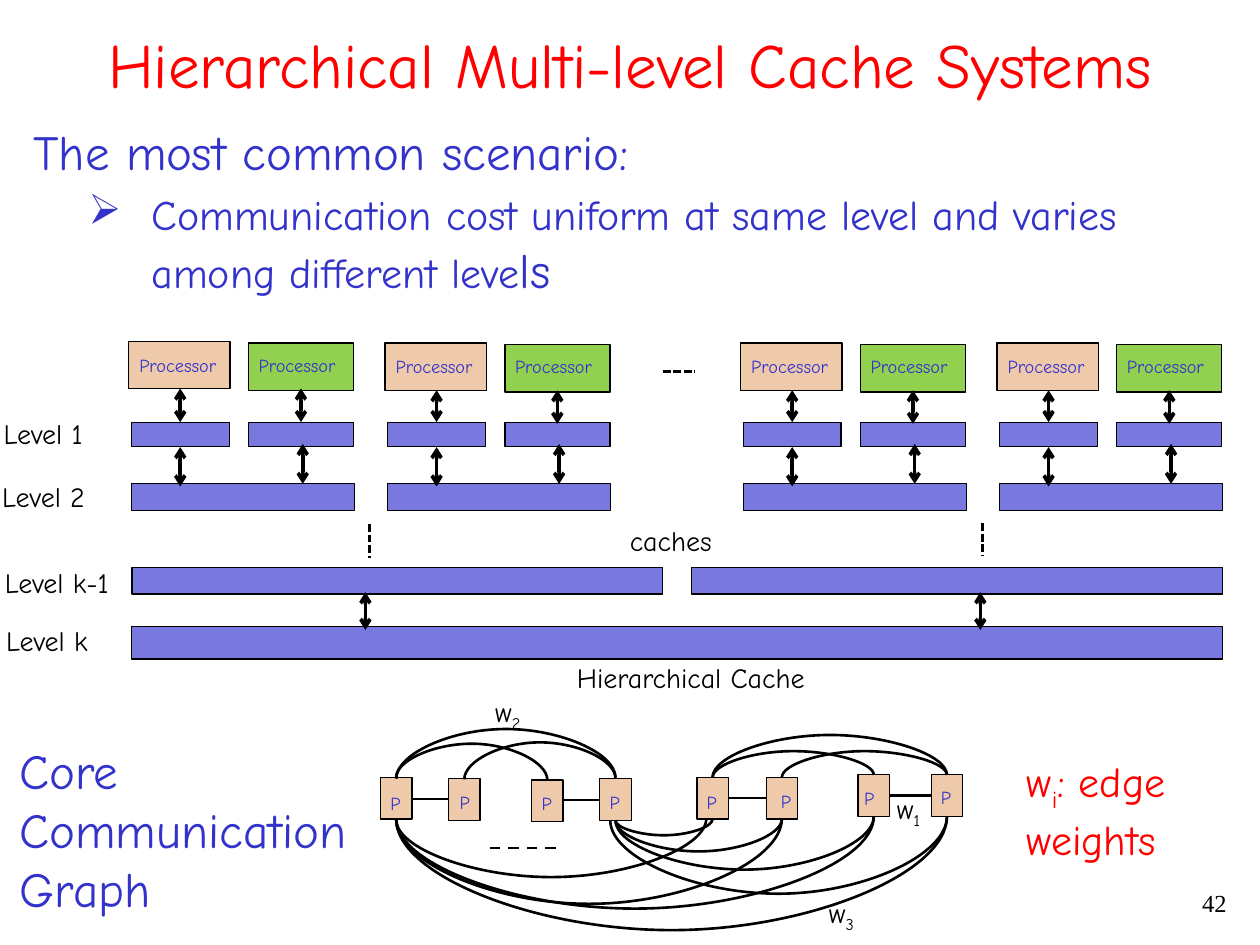
import pptx
import pptx.dml.color
import pptx.enum.dml
import pptx.enum.shapes
import pptx.enum.text
import pptx.oxml
import pptx.oxml.ns
import pptx.util
from lxml import etree

Pt = pptx.util.Pt
CONNECTOR = pptx.enum.shapes.MSO_CONNECTOR
ALIGN = pptx.enum.text.PP_ALIGN
DASH = pptx.enum.dml.MSO_LINE
qn = pptx.oxml.ns.qn

FONT = "Comic Neue"
BLACK, RED, BLUE = "000000", "FF0000", "3333CC"
PEACH, GREEN, CACHE = "EEC9AA", "92D050", "7878DE"

# Horizontal offset and drop of each group of two processors
GROUPS = [(0, 0), (146.5, 1), (349.7, 1), (496.2, 1)]
# Left and top of each graph node, then left and top of its letter
NODES = [
    (217.4, 444.3, 216, 449.3), (256.3, 445, 255.6, 448.6),
    (303.8, 445.7, 302.4, 449.3), (342.7, 445, 341.3, 448.6),
    (398.2, 444.2, 396.7, 448.6), (437.8, 444.2, 439.2, 447.8),
    (490.3, 442.8, 486.7, 446.4), (532.1, 442.8, 530.6, 445.7),
]
NODE_WIDTH, NODE_HEIGHT = 18, 23.8
# Left node, right node, height that steers the curve
UPPER_EDGES = [(0, 2, 424.8), (0, 3, 417.6), (1, 3, 424.8),
               (5, 7, 429.1), (4, 6, 429.1), (4, 7, 419.8)]
LOWER_EDGES = [(3, 4, 477.4), (3, 5, 486.7), (3, 6, 496.8), (3, 7, 510.5),
               (0, 7, 531.4), (0, 6, 519.1), (0, 5, 516.2), (0, 4, 501.1)]
# Nodes where some lower edges end off centre
SHIFTED_ENDS = {(3, 7): (-3, 0), (0, 4): (0, -3.6)}


def color(value):
    return pptx.dml.color.RGBColor.from_string(value)


def add_run(paragraph, text, size, ink, font=FONT, baseline=None):
    run = paragraph.add_run()
    run.text = text
    run.font.size = Pt(size)
    run.font.name = font
    run.font.color.rgb = color(ink)
    if baseline:
        run.font._element.set("baseline", str(baseline))


def add_frame(slide, left, top, width, height):
    box = slide.shapes.add_textbox(Pt(left), Pt(top), Pt(width), Pt(height))
    box.text_frame.word_wrap = True
    return box.text_frame


def add_label(slide, text, left, top, width, height, size, ink=BLACK,
              font=FONT, align=ALIGN.LEFT):
    frame = add_frame(slide, left, top, width, height)
    paragraph = frame.paragraphs[0]
    paragraph.alignment = align
    add_run(paragraph, text, size, ink, font)
    return frame


def add_weight(slide, subscript, left, top, width=32.4, height=26.6,
               size=16, ink=BLACK, rest=""):
    """Add a w with a subscript and, if given, more text after it."""
    paragraph = add_frame(slide, left, top, width, height).paragraphs[0]
    add_run(paragraph, "w", size, ink)
    add_run(paragraph, subscript, size, ink, baseline=-25000)
    if rest:
        add_run(paragraph, rest, size, ink)


def set_indent(paragraph, margin, indent):
    properties = paragraph._p.get_or_add_pPr()
    properties.set("marL", str(Pt(margin)))
    properties.set("indent", str(Pt(indent)))
    return properties


def add_box(slide, left, top, width, height, fill):
    box = slide.shapes.add_shape(pptx.enum.shapes.MSO_SHAPE.RECTANGLE,
                                 Pt(left), Pt(top), Pt(width), Pt(height))
    box.shadow.inherit = False
    box.fill.solid()
    box.fill.fore_color.rgb = color(fill)
    box.line.color.rgb = color(BLACK)
    box.line.width = Pt(0.75)


def add_line(slide, x1, y1, x2, y2, width=1.5, dash=None,
             kind=CONNECTOR.STRAIGHT):
    line = slide.shapes.add_connector(kind, Pt(x1), Pt(y1), Pt(x2), Pt(y2))
    line.line.color.rgb = color(BLACK)
    line.line.width = Pt(width)
    if dash:
        line.line.dash_style = dash
    etree.SubElement(line._element.spPr, qn("a:effectLst"))
    return line


def add_double_arrow(slide, x, top, bottom):
    outline = add_line(slide, x, top, x, bottom, 2).line._get_or_add_ln()
    for end in ("a:headEnd", "a:tailEnd"):
        etree.SubElement(outline, qn(end)).set("type", "arrow")


def add_arc(slide, left, left_y, right, right_y, turn_y):
    """Join two points by a curve that turns at turn_y (a connector at 90°)."""
    span = left_y - right_y
    if abs(span) < 0.7:
        span = 0.7
    x, y, half = (left + right) / 2, (left_y + right_y) / 2, (right - left) / 2
    arc = add_line(slide, x - span / 2, y - half, x + span / 2, y + half,
                   kind=CONNECTOR.CURVE)
    properties = arc._element.spPr
    properties.find(qn("a:xfrm")).set("rot", "5400000")
    guide = etree.SubElement(properties.find(".//" + qn("a:avLst")), qn("a:gd"))
    guide.set("name", "adj1")
    guide.set("fmla", f"val {round((turn_y - right_y) / span * 100000)}")


def add_heading(slide):
    title = add_label(slide, "Hierarchical Multi-level Cache Systems", 12, 12,
                      696, 48, 36, RED, align=ALIGN.CENTER)
    title.vertical_anchor = pptx.enum.text.MSO_ANCHOR.MIDDLE
    body = add_label(slide, "The most common scenario:", 12, 66, 696, 78,
                     28, BLUE)
    body.paragraphs[0].space_before = Pt(5.6)
    set_indent(body.paragraphs[0], 27, -27)
    point = body.add_paragraph()
    point.space_before = Pt(4.8)
    properties = set_indent(point, 67.5, -36)
    etree.SubElement(properties, qn("a:buChar")).set("char", "➢")
    add_run(point, "Communication cost uniform at same level and varies "
            "among different leve", 24, BLUE)
    add_run(point, "ls", 28, BLUE)


def add_processor_group(slide, x, drop):
    add_box(slide, x + 142, 196 + drop, 60, 27, GREEN)
    add_box(slide, x + 73.5, 195 + drop, 58, 27, PEACH)
    for left, top, width in ((72.5, 198.7, 65), (140.7, 198.7, 70)):
        add_label(slide, "Processor", x + left, top + drop, width, 20,
                  10.5, BLUE)
    for left, width in ((75, 56), (142, 60)):
        add_box(slide, x + left, 241.3, width, 14, CACHE)
    add_box(slide, x + 75, 276.5, 127.5, 15.3, CACHE)
    for arrow_x, top, bottom in ((103, 222 + drop, 241.2),
                                 (172, 222 + drop, 241.2 + drop),
                                 (103, 255.5, 278),
                                 (173, 253.7, 276.5)):
        add_double_arrow(slide, x + arrow_x, top, bottom)


def add_cache_hierarchy(slide):
    for x, drop in GROUPS:
        add_processor_group(slide, x, drop)
    for left in (75.5, 395.3):
        add_box(slide, left, 324.4, 303.2, 15, CACHE)
    add_box(slide, 75, 358, 623.5, 18.7, CACHE)
    for x in (208.8, 560.2):
        add_double_arrow(slide, x, 338.4, 360)
    for x1, y1, x2, y2 in ((211, 299.5, 211, 319), (561.6, 299, 561.6, 317.5),
                           (378.7, 212.4, 397.4, 212.4)):
        add_line(slide, x1, y1, x2, y2, dash=DASH.SQUARE_DOT)
    for text, left, top, width in (
            ("Level 1", -5, 234.7, 101), ("Level 2", -5.8, 270.7, 101),
            ("Level k-1", -4.3, 319.7, 101), ("Level k", -3.6, 352.8, 101),
            ("caches", 352.8, 295.9, 101),
            ("Hierarchical Cache", 322.6, 373.7, 165.6)):
        add_label(slide, text, left, top, width, 26.6, 16)


def add_communication_graph(slide):
    for left, top, letter_left, letter_top in NODES:
        add_box(slide, left, top, NODE_WIDTH, NODE_HEIGHT, PEACH)
        add_label(slide, "P", letter_left, letter_top, 16, 20, 10.5, BLUE)
    for first, second in zip(NODES[::2], NODES[1::2]):
        y = (first[1] + second[1] + NODE_HEIGHT) / 2
        add_line(slide, first[0] + NODE_WIDTH, y, second[0], y)
    for edges, side in ((UPPER_EDGES, 0), (LOWER_EDGES, NODE_HEIGHT)):
        for start, end, turn_y in edges:
            shifts = (0, 0)
            if side:
                shifts = SHIFTED_ENDS.get((start, end), shifts)
            add_arc(slide, NODES[start][0] + NODE_WIDTH / 2 + shifts[0],
                    NODES[start][1] + side,
                    NODES[end][0] + NODE_WIDTH / 2 + shifts[1],
                    NODES[end][1] + side, turn_y)
    add_line(slide, 280, 484.6, 319, 484.6, dash=DASH.DASH)
    caption = add_label(slide, "Core Communication Graph", -23, 419.8,
                        284, 104.4, 28, BLUE)
    set_indent(caption.paragraphs[0], 27, 0)
    for subscript, left, top in (("1", 505.4, 448.6), ("2", 275.8, 393.1),
                                 ("3", 466.6, 508.3)):
        add_weight(slide, subscript, left, top)
    add_weight(slide, "i", 579.6, 428.4, 127.4, 65.5, 24, RED, ": edge weights")


def main():
    presentation = pptx.Presentation()
    presentation.slide_width, presentation.slide_height = Pt(720), Pt(540)
    slide = presentation.slides.add_slide(presentation.slide_layouts[6])
    add_heading(slide)
    add_cache_hierarchy(slide)
    add_communication_graph(slide)
    add_label(slide, "42", 558, 504, 150, 24, 14, font="Times New Roman",
              align=ALIGN.RIGHT)
    presentation.save("out.pptx")


if __name__ == "__main__":
    main()
